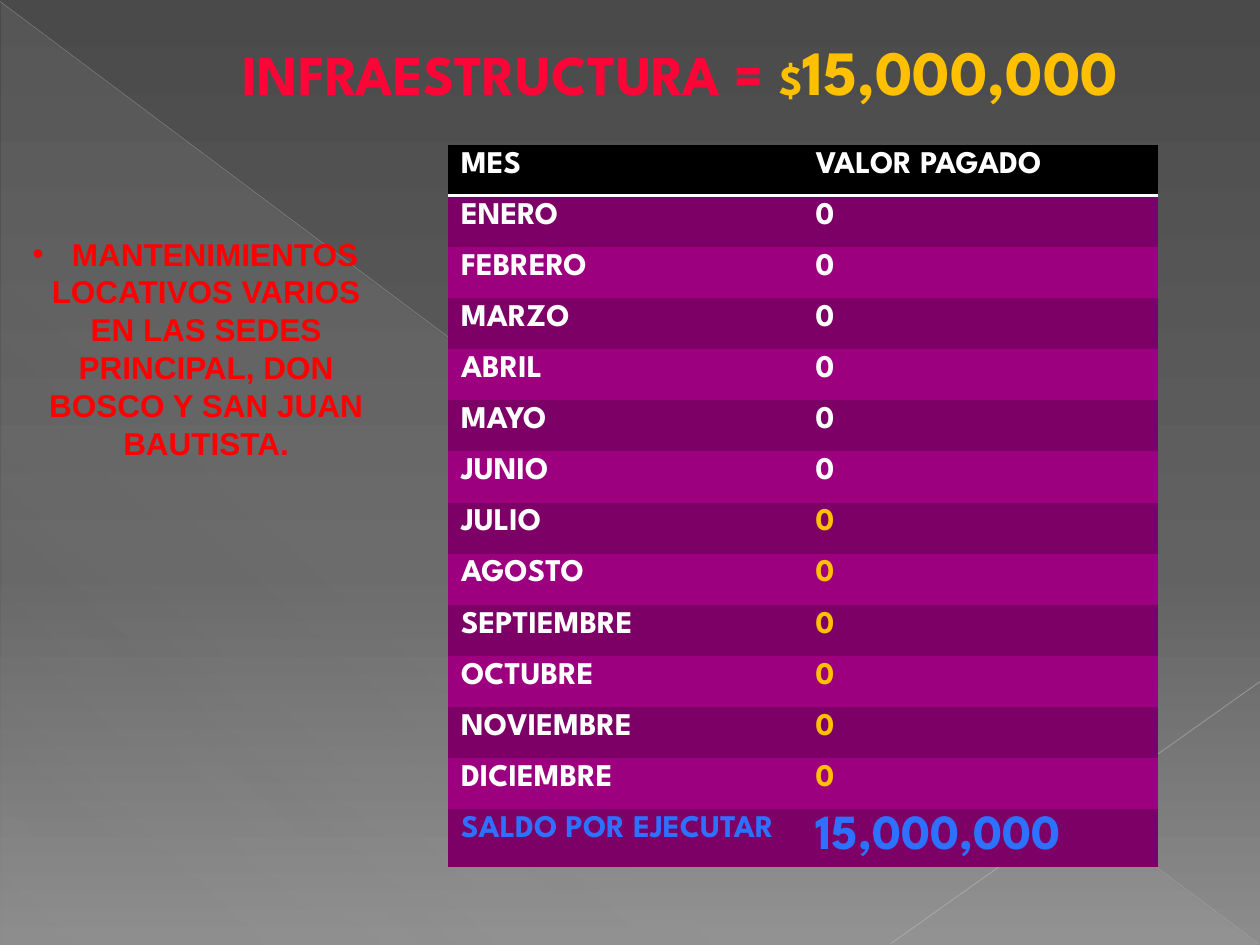
"""Build the infrastructure budget slide with its monthly payment table."""
from lxml import etree
from pptx import Presentation
from pptx import util as u
from pptx.dml.color import RGBColor
from pptx.enum import shapes, text
from pptx.oxml import parse_xml
from pptx.oxml.ns import nsdecls, qn

WHITE = RGBColor(0xFF, 0xFF, 0xFF)
BLACK = RGBColor(0x00, 0x00, 0x00)
DARK_PURPLE = RGBColor(0x7D, 0x00, 0x66)
PURPLE = RGBColor(0x9C, 0x00, 0x7F)
GOLD = RGBColor(0xFF, 0xC0, 0x00)
BLUE = RGBColor(0x2C, 0x71, 0xFF)
RED = RGBColor(0xFF, 0x00, 0x00)
GREY = RGBColor(0xBF, 0xBF, 0xBF)
LIGHT_GREY = RGBColor(0xC6, 0xC6, 0xC6)
HEADING_FONT = "League Spartan"


def paint_gradient(fill, element, stops, angle):
    fill.gradient()
    gradient = element.find(".//" + qn("a:gradFill"))
    listing = "".join(
        f'<a:gs pos="{position * 1000}"><a:srgbClr val="{color}">'
        f'<a:alpha val="{opacity * 1000}"/></a:srgbClr></a:gs>'
        for position, color, opacity in stops)
    gradient.getparent().replace(gradient, parse_xml(
        f'<a:gradFill {nsdecls("a")} rotWithShape="1"><a:gsLst>{listing}</a:gsLst>'
        f'<a:lin ang="{angle * 60000}" scaled="0"/></a:gradFill>'))


def add_run(paragraph, words, size, color=None, font=HEADING_FONT):
    run = paragraph.add_run()
    run.text = words
    for key, value in {"name": font, "size": u.Pt(size), "bold": True}.items():
        setattr(run.font, key, value)
    if color is not None:
        run.font.color.rgb = color
    return run


prs = Presentation()
prs.slide_width, prs.slide_height = u.Cm(25.4), u.Cm(19.05)
slide = prs.slides.add_slide(prs.slide_layouts[6])
paint_gradient(slide.background.fill, slide._element,
               [(0, "4A4A4A", 100), (60, "626262", 100), (100, "8C8C8C", 100)], 90)

sheen = slide.shapes.add_shape(shapes.MSO_SHAPE.RIGHT_TRIANGLE,
                               u.Cm(0.03), u.Cm(0.05), u.Cm(25.35), u.Cm(19))
sheen.shadow.inherit = False
sheen.line.fill.background()
paint_gradient(sheen.fill, sheen._element,
               [(0, "D2D2D2", 10), (70, "D2D2D2", 8), (100, "D2D2D2", 1)], 133)

for ends, color, width, opacity in [
    ((0, 0.03, 25.37, 19.02), GREY, 0.39, 35),
    ((25.4, 13.74, 17.96, 19.02), LIGHT_GREY, 0.47, 45),
]:
    ray = slide.shapes.add_connector(shapes.MSO_CONNECTOR.STRAIGHT, *map(u.Cm, ends))
    ray.line.color.rgb = color
    ray.line.width = u.Pt(width)
    shade = ray._element.find(".//" + qn("a:srgbClr"))
    etree.SubElement(shade, qn("a:alpha")).set("val", str(opacity * 1000))
    etree.SubElement(ray._element.spPr, qn("a:effectLst"))

months = ["ENERO", "FEBRERO", "MARZO", "ABRIL", "MAYO", "JUNIO", "JULIO",
          "AGOSTO", "SEPTIEMBRE", "OCTUBRE", "NOVIEMBRE", "DICIEMBRE"]
rows = [("MES", "VALOR PAGADO"), *((month, "0") for month in months),
        ("SALDO POR EJECUTAR", "15,000,000")]
balance_row = len(rows) - 1
payments = slide.shapes.add_table(len(rows), 2, u.Cm(9.04), u.Cm(2.92),
                                  u.Cm(14.3), u.Cm(1.03 * len(rows))).table
payments.first_row = payments.horz_banding = False
payments._tbl.tblPr.find(qn("a:tableStyleId")).text = "{2D5ABB26-0587-4C30-8999-92F81FD0307C}"
for r, row in enumerate(rows):
    for c, words in enumerate(row):
        cell = payments.cell(r, c)
        cell.fill.solid()
        cell.fill.fore_color.rgb = BLACK if r == 0 else DARK_PURPLE if r % 2 else PURPLE
        color = BLUE if r == balance_row else GOLD if c == 1 and r > 6 else WHITE
        size = 28 if r == balance_row and c == 1 else 18
        add_run(cell.text_frame.paragraphs[0], words, size, color)
        if r == 0:
            cell._tc.tcPr.insert(0, parse_xml(
                f'<a:lnB {nsdecls("a")} w="25400"><a:solidFill>'
                f'<a:srgbClr val="{WHITE}"/></a:solidFill></a:lnB>'))

title = slide.shapes.add_textbox(u.Cm(4.29), u.Cm(0.53), u.Cm(18.85), u.Cm(1.8)).text_frame
title.word_wrap = True
heading = title.paragraphs[0]
heading.alignment = text.PP_ALIGN.CENTER
topic = add_run(heading, "INFRAESTRUCTURA = ", 32)
paint_gradient(topic.font.fill, topic._r,
               [(0, "FF8597", 100), (75, "FF0537", 100), (100, "A90042", 100)], 90)
add_run(heading, "$", 24, GOLD)
add_run(heading, "15,000,000", 36, GOLD)

works = slide.shapes.add_textbox(u.Cm(0.41), u.Cm(3.84), u.Cm(7.49), u.Cm(5.64)).text_frame
works.word_wrap = True
works.margin_top = u.Cm(0.89)
lead = works.paragraphs[0]
add_run(lead, "MANTENIMIENTOS", 18, RED, "Arial")
bullet_format = lead._p.get_or_add_pPr()
for key, value in {"marL": u.Cm(0.79), "indent": -u.Cm(0.79)}.items():
    bullet_format.set(key, str(value))
etree.SubElement(bullet_format, qn("a:buFont")).set("typeface", "Arial")
etree.SubElement(bullet_format, qn("a:buChar")).set("char", "•")
detail = works.add_paragraph()
detail.alignment = text.PP_ALIGN.CENTER
add_run(detail, "LOCATIVOS VARIOS EN LAS SEDES PRINCIPAL, DON BOSCO Y SAN JUAN BAUTISTA.",
        18, RED, "Arial")

prs.save("out.pptx")
